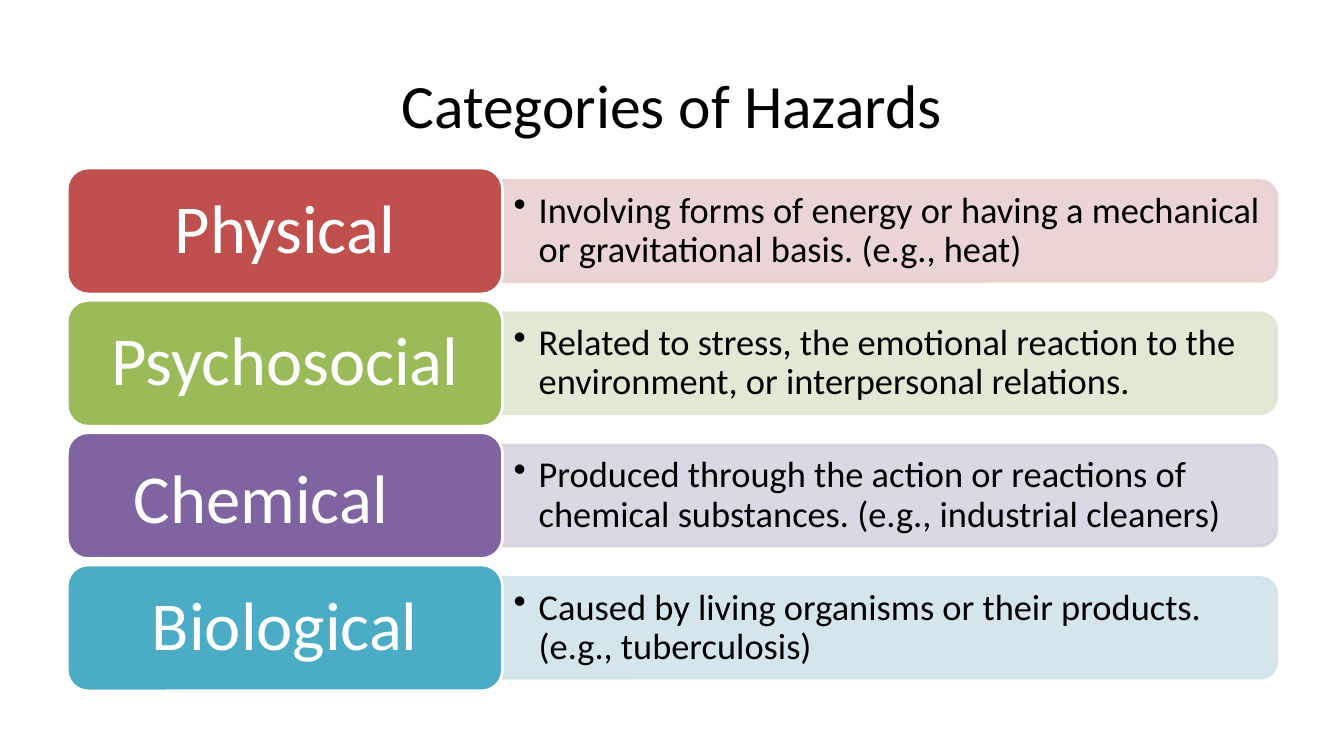
from dataclasses import dataclass

from lxml.etree import SubElement
from pptx import Presentation
from pptx.dml.color import RGBColor
from pptx.enum.shapes import MSO_SHAPE as Kind
from pptx.enum.text import MSO_ANCHOR as Anchor, PP_ALIGN as Align
from pptx.oxml.ns import qn
from pptx.util import Pt

LEFT, TOP, PITCH = 48, 120, 94.5
LABEL_W, LABEL_H = 311, 90
BAR_W, BAR_H = 553, 72
TEXT_W, TEXT_H = 549.5, 65


@dataclass
class Hazard:
    name: str
    detail: str
    color: str
    tint: str
    spacing: float = 0.9


HAZARDS = [
    Hazard("Physical", "Involving forms of energy or having a mechanical or gravitational basis. (e.g., heat)",
           "C0504D", "E8D0D0"),
    Hazard("Psychosocial", "Related to stress, the emotional reaction to the environment, or interpersonal relations.",
           "9BBB59", "DEE7D1"),
    Hazard("Chemical\t", "Produced through the action or reactions of chemical substances. (e.g., industrial cleaners)",
           "8064A2", "D8D3E0", 1.0),
    Hazard("Biological", "Caused by living organisms or their products. (e.g., tuberculosis)",
           "4BACC6", "D0E3EA"),
]


def paint(fill, color: str, alpha: int = 100) -> None:
    fill.solid()
    fill.fore_color.rgb = RGBColor.from_string(color)
    if alpha < 100:
        tone = fill._xPr.find(qn("a:solidFill"))[0]
        SubElement(tone, qn("a:alpha"), val=str(alpha * 1000))


def write(shape, text: str, *, size: float, color: str = "000000", align=Align.CENTER,
          spacing: float = 1.0, inset: tuple = (7.2, 3.6), bullet: bool = False) -> None:
    frame = shape.text_frame
    frame.word_wrap = True
    frame.vertical_anchor = Anchor.MIDDLE
    frame.margin_left = frame.margin_right = Pt(inset[0])
    frame.margin_top = frame.margin_bottom = Pt(inset[1])
    para = frame.paragraphs[0]
    para.alignment = align
    para.line_spacing = spacing
    if bullet:
        para.level = 1
        props = para._p.get_or_add_pPr()
        props.set("marL", str(Pt(18)))
        props.set("indent", str(-Pt(18)))
        SubElement(props, qn("a:buChar"), char="•")
    run = para.add_run()
    run.text = text
    run.font.name = "Calibri"
    run.font.size = Pt(size)
    paint(run.font.fill, color)


def block(slide, kind, x: float, y: float, w: float, h: float, *,
          color: str, edge: str, alpha: int = 100):
    shape = slide.shapes.add_shape(kind, Pt(x), Pt(y), Pt(w), Pt(h))
    shape.shadow.inherit = False
    paint(shape.fill, color, alpha)
    shape.line.width = Pt(2)
    paint(shape.line.fill, edge, alpha)
    return shape


def draw(slide, hazard: Hazard, top: float) -> None:
    mid = top + LABEL_H / 2
    edge = LEFT + LABEL_W
    bar = block(slide, Kind.ROUND_2_SAME_RECTANGLE, edge + (BAR_W - BAR_H) / 2, mid - BAR_W / 2,
                BAR_H, BAR_W, color=hazard.tint, edge=hazard.tint, alpha=90)
    bar.rotation = 90
    box = slide.shapes.add_textbox(Pt(edge), Pt(mid - TEXT_H / 2), Pt(TEXT_W), Pt(TEXT_H))
    write(box, hazard.detail, size=26, align=Align.LEFT, spacing=0.9, inset=(7.8, 3.9), bullet=True)
    label = block(slide, Kind.ROUNDED_RECTANGLE, LEFT, top, LABEL_W, LABEL_H,
                  color=hazard.color, edge="FFFFFF")
    write(label, hazard.name, size=49, color="FFFFFF", spacing=hazard.spacing, inset=(14.7, 7.35))


def main() -> None:
    deck = Presentation()
    deck.slide_width, deck.slide_height = Pt(960), Pt(540)
    slide = deck.slides.add_slide(deck.slide_layouts[5])
    title = slide.shapes.title
    title.left, title.top, title.width, title.height = Pt(48), Pt(29.5), Pt(864), Pt(90)
    write(title, "Categories of Hazards", size=44)
    for row, hazard in enumerate(HAZARDS):
        draw(slide, hazard, TOP + row * PITCH)
    deck.save("out.pptx")


if __name__ == "__main__":
    main()
